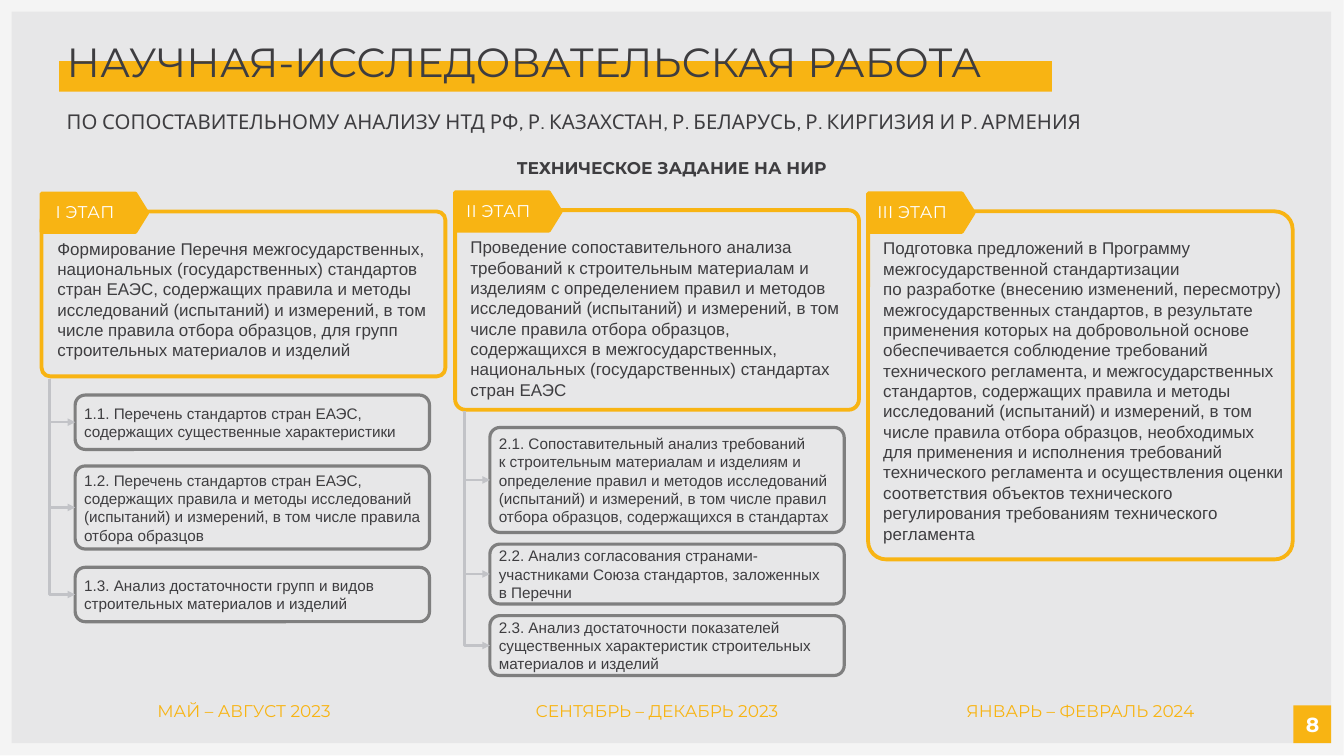
from lxml.etree import SubElement
from pptx import Presentation
from pptx.dml.color import RGBColor
from pptx.enum.shapes import MSO_CONNECTOR as Connector, MSO_SHAPE as Shape
from pptx.enum.text import MSO_ANCHOR as Anchor, MSO_AUTO_SIZE as AutoSize, PP_ALIGN as Align
from pptx.oxml.ns import qn
from pptx.util import Pt

AMBER = RGBColor(0xF8, 0xB4, 0x13)
INK = RGBColor(0x3E, 0x3D, 0x40)
WHITE = RGBColor(0xFF, 0xFF, 0xFF)
FRAME = RGBColor(0xF4, 0xF4, 0xF4)
PANEL = RGBColor(0xE7, 0xE7, 0xE8)
GREY = RGBColor(0x7F, 0x7F, 0x7F)
SILVER = RGBColor(0xC2, 0xC3, 0xC7)

DEFAULT_INSETS = (7.2, 3.6, 7.2, 3.6)
TIGHT_INSETS = (0, 0.72, 0, 0)

# Stage: left, tag top, box width, box height, label, label left and width,
# body left, width and height, body text
STAGES = [
    (49, 228.2, 475.9, 194.4, "I ЭТАП", 65.5, 83.5, 60.5, 459.4, 152.6,
     "Формирование Перечня межгосударственных, национальных (государственных) "
     "стандартов стран ЕАЭС, содержащих правила и методы исследований (испытаний) "
     "и измерений, в том числе правила отбора образцов, для групп строительных "
     "материалов и изделий"),
    (536.4, 226.6, 475.9, 235.4, "II ЭТАП", 549.4, 97.2, 547.2, 459.4, 200.9,
     "Проведение сопоставительного анализа требований к строительным материалам и "
     "изделиям с определением правил и методов исследований (испытаний) и измерений, "
     "в том числе правила отбора образцов, содержащихся в межгосударственных, "
     "национальных (государственных) стандартах стран ЕАЭС"),
    (1023.1, 228, 500.4, 410.4, "III ЭТАП", 1033.9, 97.2, 1033.9, 489.6, 370.8,
     "Подготовка предложений в Программу межгосударственной стандартизации\n"
     "по разработке (внесению изменений, пересмотру) межгосударственных стандартов, "
     "в результате применения которых на добровольной основе обеспечивается "
     "соблюдение требований технического регламента, и межгосударственных стандартов, "
     "содержащих правила и методы исследований (испытаний) и измерений, в том числе "
     "правила отбора образцов, необходимых для применения и исполнения требований "
     "технического регламента и осуществления оценки соответствия объектов "
     "технического регулирования требованиям технического регламента"),
]

# Tasks by column left: top, height, arrow start, text
TASKS = {
    88.6: [
        (465.8, 64.1, 446.4,
         "1.1. Перечень стандартов стран ЕАЭС, содержащих существенные характеристики"),
        (549.4, 97.9, 446.4,
         "1.2. Перечень стандартов стран ЕАЭС, содержащих правила и методы исследований "
         "(испытаний) и измерений, в том числе правила отбора образцов"),
        (668.9, 64.1, 481.7,
         "1.3. Анализ достаточности групп и видов строительных материалов и изделий"),
    ],
    577.4: [
        (504, 123.8, 484.6,
         "2.1. Сопоставительный анализ требований\nк строительным материалам и изделиям и "
         "определение правил и методов исследований (испытаний) и измерений, в том числе "
         "правил отбора образцов, содержащихся в стандартах"),
        (641.5, 70.6, 524.9,
         "2.2. Анализ согласования странами-участниками Союза стандартов, заложенных\n"
         "в Перечни"),
        (725.8, 70.6, 538.6,
         "2.3. Анализ достаточности показателей существенных характеристик строительных "
         "материалов и изделий"),
    ],
}
TASK_WIDTH, TASK_RADIUS, ARROW_REACH = 417.6, 11.8, 30.2

DATES = [(120.2, "МАЙ – АВГУСТ 2023"), (607, "СЕНТЯБРЬ – ДЕКАБРЬ 2023"),
         (1105.9, "ЯНВАРЬ – ФЕВРАЛЬ 2024")]


class Painter:
    """Holds the shared style and the current slide."""

    heading_font, body_font = "Montserrat", "Arial"

    def __init__(self, page):
        self.page = page

    def fill_text(self, shape, text, size, font=None, color=INK, bold=False,
                  align=Align.LEFT, insets=DEFAULT_INSETS, anchor=Anchor.TOP,
                  auto_size=AutoSize.NONE, spacing=0, before=0):
        frame = shape.text_frame
        left, top, right, bottom = map(Pt, insets)
        layout = {"word_wrap": True, "auto_size": auto_size, "vertical_anchor": anchor,
                  "margin_left": left, "margin_top": top,
                  "margin_right": right, "margin_bottom": bottom}
        for name, value in layout.items():
            setattr(frame, name, value)
        frame.text = text
        style = {"size": Pt(size), "name": font or self.body_font, "bold": bold}
        for para in frame.paragraphs:
            para.alignment = align
            para.space_before = Pt(before)
            for span in para.runs:
                for name, value in style.items():
                    setattr(span.font, name, value)
                span.font.color.rgb = color
                if spacing:
                    span.font._element.set("spc", str(round(spacing * 100)))

    def text(self, left, top, width, height, text, size, **style):
        box = self.page.shapes.add_textbox(Pt(left), Pt(top), Pt(width), Pt(height))
        self.fill_text(box, text, size, auto_size=AutoSize.SHAPE_TO_FIT_TEXT, **style)

    def shape(self, kind, left, top, width, height, fill=None, line=None,
              weight=4.5, adjust=None):
        shape = self.page.shapes.add_shape(kind, Pt(left), Pt(top), Pt(width), Pt(height))
        shape.shadow.inherit = False
        if fill is None:
            shape.fill.background()
        else:
            shape.fill.solid()
            shape.fill.fore_color.rgb = fill
        if line is None:
            shape.line.fill.background()
        else:
            shape.line.color.rgb = line
            shape.line.width = Pt(weight)
        if adjust is not None:
            shape.adjustments[0] = adjust
        return shape

    def task(self, left, top, height, text):
        box = self.shape(Shape.ROUNDED_RECTANGLE, left, top, TASK_WIDTH, height,
                         line=GREY, weight=3.75, adjust=TASK_RADIUS / height)
        self.fill_text(box, text, 18, anchor=Anchor.MIDDLE)

    def arrow(self, x1, y1, x2, y2):
        """Draws an elbow that goes down first, then right."""
        # The one-bend elbow is laid out flat, then turned about its centre
        x, y = (x1 + x2) / 2, (y1 + y2) / 2
        half_length, half_reach = (y2 - y1) / 2, (x2 - x1) / 2
        line = self.page.shapes.add_connector(
            Connector.ELBOW, Pt(x - half_length), Pt(y - half_reach),
            Pt(x + half_length), Pt(y + half_reach))
        line.line.color.rgb = SILVER
        line.line.width = Pt(3)
        properties = line._element.spPr
        frame = properties.find(qn("a:xfrm"))
        frame.set("rot", "16200000")
        frame.set("flipH", "1")
        properties.find(qn("a:prstGeom")).set("prst", "bentConnector2")
        SubElement(properties.find(qn("a:ln")), qn("a:tailEnd"), type="triangle")
        SubElement(properties, qn("a:effectLst"))

    def stage(self, left, top, width, height, label, label_left, label_width,
              body_left, body_width, body_height, body):
        self.shape(Shape.ROUNDED_RECTANGLE, left, top + 21.2, width, height,
                   line=AMBER, adjust=0.052)
        self.shape(Shape.PENTAGON, left, top, 124.6, 45.4, fill=AMBER, line=AMBER,
                   adjust=0.31)
        self.text(label_left, top + 8.6, label_width, 25.2, label, 20, color=WHITE,
                  font=self.heading_font, insets=TIGHT_INSETS, spacing=0.3)
        self.text(body_left, top + 49, body_width, body_height, body, 20)


def main():
    deck = Presentation()
    deck.slide_width, deck.slide_height = Pt(1584), Pt(891.36)
    page = deck.slides.add_slide(deck.slide_layouts[6])
    painter = Painter(page)
    heading = {"font": painter.heading_font}

    # Backdrop and page number
    painter.shape(Shape.RECTANGLE, 0, 0, 1583.5, 890.8, fill=FRAME)
    painter.shape(Shape.RECTANGLE, 13.7, 13.7, 1555.2, 862.6, fill=PANEL)
    painter.shape(Shape.RECTANGLE, 1524.2, 831.6, 44.6, 44.6, fill=AMBER)
    painter.text(1522.8, 835.9, 48.2, 36, "8", 24, color=WHITE, bold=True,
                 align=Align.CENTER, **heading)

    # Titles
    painter.shape(Shape.RECTANGLE, 69.8, 72, 1170, 36, fill=AMBER)
    painter.text(78.5, 43.2, 1423.4, 59, "НАУЧНАЯ-ИССЛЕДОВАТЕЛЬСКАЯ РАБОТА", 48,
                 insets=TIGHT_INSETS, before=1, **heading)
    painter.text(78.5, 128.2, 1388.9, 30.2,
                 "ПО СОПОСТАВИТЕЛЬНОМУ АНАЛИЗУ НТД РФ, Р. КАЗАХСТАН, Р. БЕЛАРУСЬ, "
                 "Р. КИРГИЗИЯ И Р. АРМЕНИЯ", 24, font="Cabin",
                 insets=TIGHT_INSETS, spacing=0.1, before=1)
    painter.text(579.6, 182.2, 424.1, 31.7, "ТЕХНИЧЕСКОЕ ЗАДАНИЕ НА НИР", 20,
                 bold=True, align=Align.CENTER, **heading)

    # Stages
    for stage in STAGES:
        painter.stage(*stage)

    # Tasks with their arrows
    for left, tasks in TASKS.items():
        for top, height, start, text in tasks:
            painter.task(left, top, height, text)
        for top, height, start, text in tasks:
            painter.arrow(left - ARROW_REACH, start, left, top + height / 2)

    # Dates
    for left, date in DATES:
        painter.text(left, 825.1, 334.8, 25.2, date, 20, color=AMBER,
                     align=Align.CENTER, insets=TIGHT_INSETS, **heading)

    deck.save("out.pptx")


if __name__ == "__main__":
    main()
